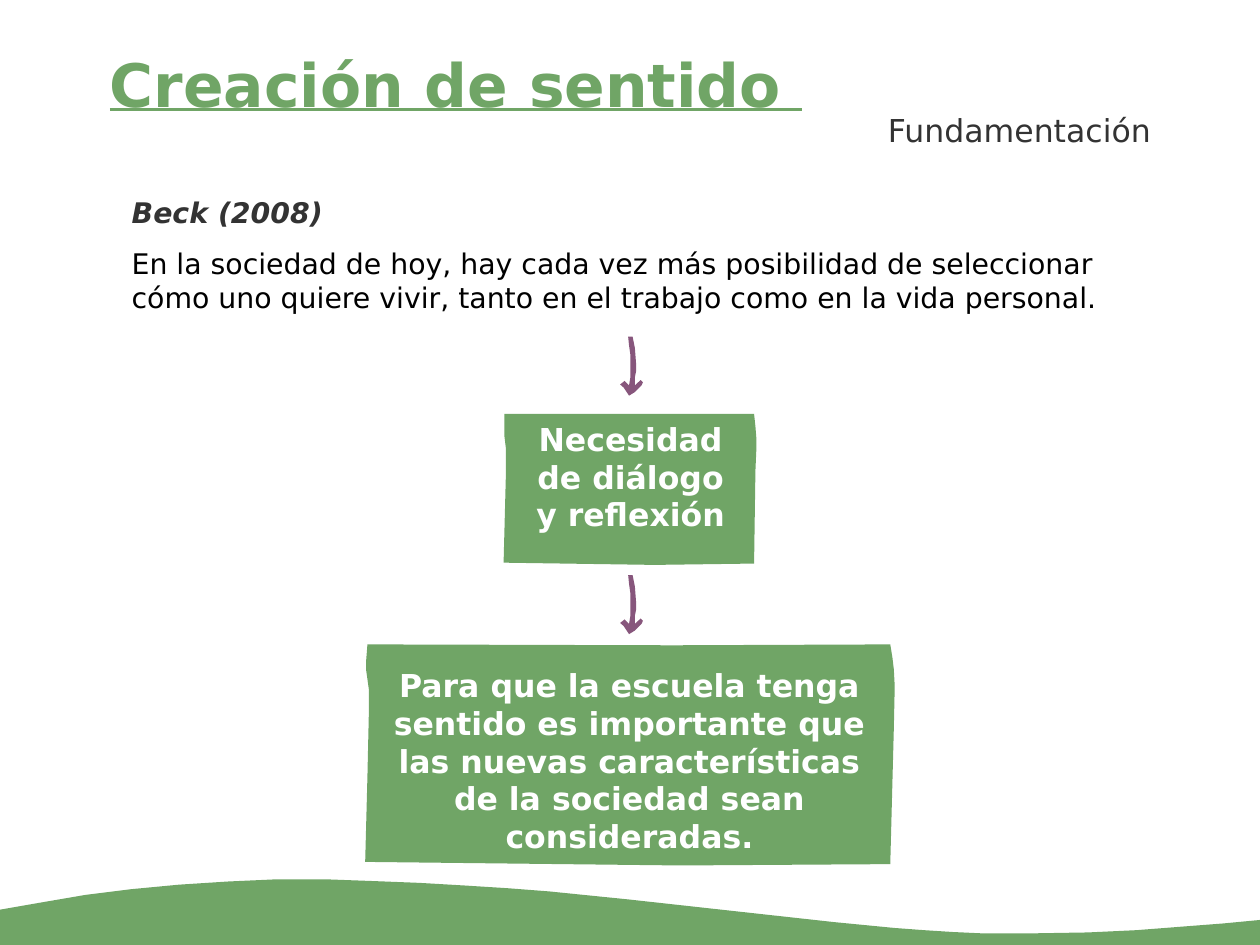
from pptx import Presentation
from pptx.dml.color import RGBColor
from pptx.enum.text import MSO_ANCHOR, PP_ALIGN as Align
from pptx.util import Cm, Pt

FONT = "DejaVu Sans"
GREEN = RGBColor(0x70, 0xA5, 0x66)
PURPLE = RGBColor(0x87, 0x56, 0x7C)
GRAY = RGBColor(0x33, 0x33, 0x33)
BLACK = RGBColor(0x00, 0x00, 0x00)
WHITE = RGBColor(0xFF, 0xFF, 0xFF)

# Outlines in centimetres
NEED_BOX = [
    (11.3, 9.27), (11.3, 9.78), (11.33, 10.03), (11.33, 10.67), (11.28, 12.6),
    (14.66, 12.65), (16.89, 12.62), (16.92, 10.54), (16.94, 10.08),
    (16.94, 9.8), (16.92, 9.55), (16.89, 9.27),
]
SCHOOL_BOX = [
    (8.23, 14.43), (8.2, 14.83), (8.2, 14.99), (8.26, 15.42), (8.26, 16.05),
    (8.23, 17.4), (8.18, 19.3), (15.24, 19.38), (19.94, 19.35),
    (20.02, 16.31), (20.04, 15.37), (20.02, 14.99), (19.99, 14.73),
    (19.94, 14.43), (15.09, 14.45),
]
WAVE = [
    (0, 20.37), (0.86, 20.22), (1.91, 20.04), (2.95, 19.91), (4.01, 19.81),
    (5.11, 19.74), (6.2, 19.69), (7.29, 19.69), (8.38, 19.73), (9.4, 19.77),
    (10.41, 19.83), (11.38, 19.89), (12.29, 19.96), (14.07, 20.14),
    (18.69, 20.65), (20.04, 20.78), (20.7, 20.83), (21.34, 20.87),
    (21.97, 20.9), (23.19, 20.9), (24.36, 20.88), (25.45, 20.83),
    (26.47, 20.75), (27.38, 20.68), (28.22, 20.6), (28.22, 21.16), (0, 21.16),
]
ARROW = [
    (0.18, 0), (0.2, 0.2), (0.23, 0.41), (0.23, 0.91), (0.2, 1.09),
    (0.1, 0.99), (0, 1.07), (0.08, 1.14), (0.2, 1.32), (0.33, 1.24),
    (0.48, 1.09), (0.51, 1.02), (0.46, 0.97), (0.33, 1.09), (0.33, 0.91),
    (0.36, 0.76), (0.36, 0.64), (0.33, 0.25), (0.28, 0),
]
ARROW_LEFT = 13.89
ARROW_TOPS = (7.54, 12.88)


def add_outline(page, points, color, left=0, top=0):
    corners = [(Cm(left + x), Cm(top + y)) for x, y in points]
    builder = page.shapes.build_freeform(*corners[0])
    builder.add_line_segments(corners[1:], close=True)
    shape = builder.convert_to_shape()
    shape.shadow.inherit = False
    shape.fill.solid()
    shape.fill.fore_color.rgb = color
    shape.line.fill.background()


def add_box(page, left, top, width, height):
    box = page.shapes.add_textbox(Cm(left), Cm(top), Cm(width), Cm(height))
    frame = box.text_frame
    frame.word_wrap = True
    frame.vertical_anchor = MSO_ANCHOR.TOP
    frame.margin_left = frame.margin_right = 0
    frame.margin_top = frame.margin_bottom = 0
    return frame


def write(para, text, size=20, color=WHITE, bold=False, italic=False,
          underline=False, align=Align.LEFT, before=0, spacing=None):
    para.alignment = align
    para.space_before = Pt(before)
    if spacing:
        para.line_spacing = Pt(spacing)
    span = para.add_run()
    span.text = text
    font = span.font
    font.name, font.size, font.color.rgb = FONT, Pt(size), color
    font.bold, font.italic, font.underline = bold, italic, underline


def main():
    deck = Presentation()
    deck.slide_width, deck.slide_height = Cm(28.22), Cm(21.16)
    page = deck.slides.add_slide(deck.slide_layouts[6])

    # Green panels, wave and arrows
    for points in (NEED_BOX, SCHOOL_BOX, WAVE):
        add_outline(page, points, GREEN)
    for top in ARROW_TOPS:
        add_outline(page, ARROW, PURPLE, ARROW_LEFT, top)

    # Heading
    title = add_box(page, 2.46, 1.1, 24.36, 3.15)
    write(title.paragraphs[0], "Creación de sentido ", size=38, color=GREEN,
          bold=True, underline=True, spacing=44.5)
    section = add_box(page, 2.39, 2.49, 23.39, 0.91)
    write(section.paragraphs[0], "Fundamentación", color=GRAY,
          align=Align.RIGHT)

    # Quotation
    quote = add_box(page, 2.95, 4.37, 22.55, 2.67)
    write(quote.paragraphs[0], "Beck (2008)", size=18, color=GRAY,
          bold=True, italic=True)
    write(quote.add_paragraph(),
          "En la sociedad de hoy, hay cada vez más posibilidad de seleccionar "
          "cómo uno quiere vivir, tanto en el trabajo como en la vida personal.",
          size=18, color=BLACK, before=10.5)

    # Panel texts
    need = add_box(page, 11.89, 9.4, 4.47, 2.97)
    write(need.paragraphs[0], "Necesidad de diálogo y reflexión",
          bold=True, align=Align.CENTER)
    school = add_box(page, 8.69, 14.91, 10.82, 4.37)
    write(school.paragraphs[0],
          "Para que la escuela tenga sentido es importante que las nuevas "
          "características de la sociedad sean consideradas.",
          bold=True, align=Align.CENTER)

    deck.save("out.pptx")


if __name__ == "__main__":
    main()
